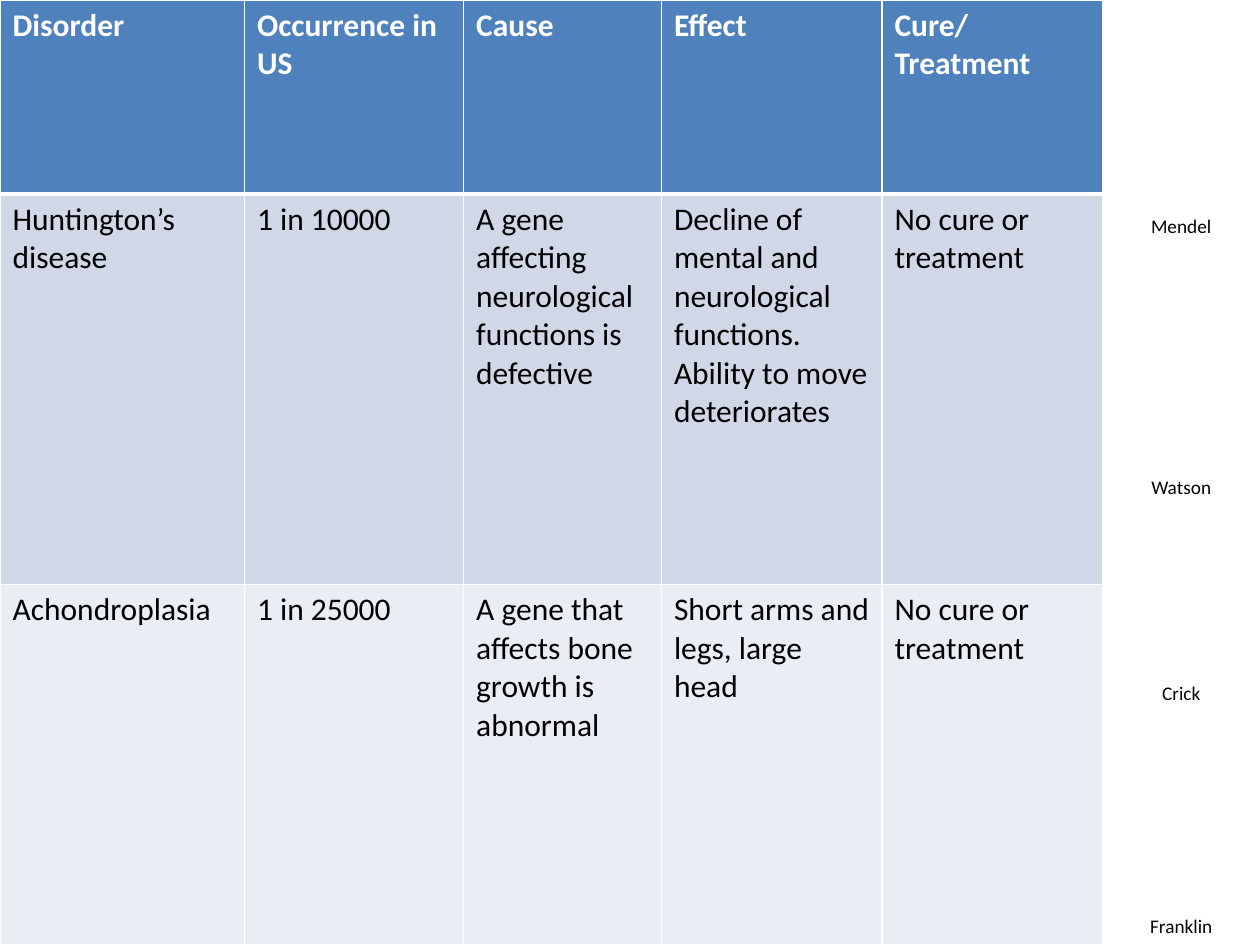
from lxml.etree import SubElement
from pptx import Presentation
from pptx.dml.color import RGBColor
from pptx.enum.text import MSO_AUTO_SIZE, PP_ALIGN
from pptx.oxml.ns import qn
from pptx.util import Inches, Pt

ROWS = [
    ("Disorder", "Occurrence in US", "Cause", "Effect", "Cure/Treatment"),
    (
        "Huntington’s disease",
        "1 in 10000",
        "A gene affecting neurological functions is defective",
        "Decline of mental and neurological functions. Ability to move deteriorates",
        "No cure or treatment",
    ),
    (
        "Achondroplasia",
        "1 in 25000",
        "A gene that affects bone growth is abnormal",
        "Short arms and legs, large head",
        "No cure or treatment",
    ),
]
COLUMN_WIDTHS = [1.94, 1.74, 1.57, 1.75, 1.75]
ROW_HEIGHTS = [1.54, 3.1, 2.86]
ROW_FILLS = ["4F81BD", "D0D8E8", "E9EDF4"]
SCIENTISTS = [("Mendel", 1.65), ("Watson", 3.72), ("Crick", 5.36), ("Franklin", 7.21)]
WHITE, BLACK = "FFFFFF", "000000"


def color(value):
    return RGBColor.from_string(value)


def style_font(paragraph, size, value, bold=False):
    for run in paragraph.runs:
        run.font.name = "Calibri"
        run.font.size = Pt(size)
        run.font.bold = bold
        run.font.color.rgb = color(value)


def add_border(cell, side, points):
    properties = cell._tc.get_or_add_tcPr()
    line = SubElement(properties, qn(f"a:ln{side}"), w=str(Pt(points)))
    fill = SubElement(line, qn("a:solidFill"))
    SubElement(fill, qn("a:srgbClr"), val=WHITE)


def format_cell(cell, text, row_index):
    header = row_index == 0
    widths = {"L": 1, "R": 1, "T": 3 if row_index == 1 else 1, "B": 3 if header else 1}
    for side, points in widths.items():
        add_border(cell, side, points)
    cell.fill.solid()
    cell.fill.fore_color.rgb = color(ROW_FILLS[row_index])
    cell.text_frame.text = text
    style_font(cell.text_frame.paragraphs[0], 18, WHITE if header else BLACK, header)


def add_disorder_table(slide):
    table = slide.shapes.add_table(
        len(ROWS), len(COLUMN_WIDTHS), 0, 0,
        Inches(sum(COLUMN_WIDTHS)), Inches(sum(ROW_HEIGHTS)),
    ).table
    for column, width in zip(table.columns, COLUMN_WIDTHS):
        column.width = Inches(width)
    for row_index, (row, height) in enumerate(zip(table.rows, ROW_HEIGHTS)):
        row.height = Inches(height)
        for cell, text in zip(row.cells, ROWS[row_index]):
            format_cell(cell, text, row_index)


def add_scientist(slide, name, top):
    label = slide.shapes.add_textbox(Inches(8.75), Inches(top), Inches(1.25), Inches(0.29))
    text_frame = label.text_frame
    text_frame.text = name
    text_frame.word_wrap = True
    text_frame.auto_size = MSO_AUTO_SIZE.SHAPE_TO_FIT_TEXT
    paragraph = text_frame.paragraphs[0]
    paragraph.alignment = PP_ALIGN.CENTER
    style_font(paragraph, 11, BLACK)


def main():
    presentation = Presentation()
    presentation.slide_width = Inches(10)
    presentation.slide_height = Inches(7.5)
    slide = presentation.slides.add_slide(presentation.slide_layouts[6])
    for name, top in SCIENTISTS:
        add_scientist(slide, name, top)
    add_disorder_table(slide)
    presentation.save("out.pptx")


if __name__ == "__main__":
    main()
